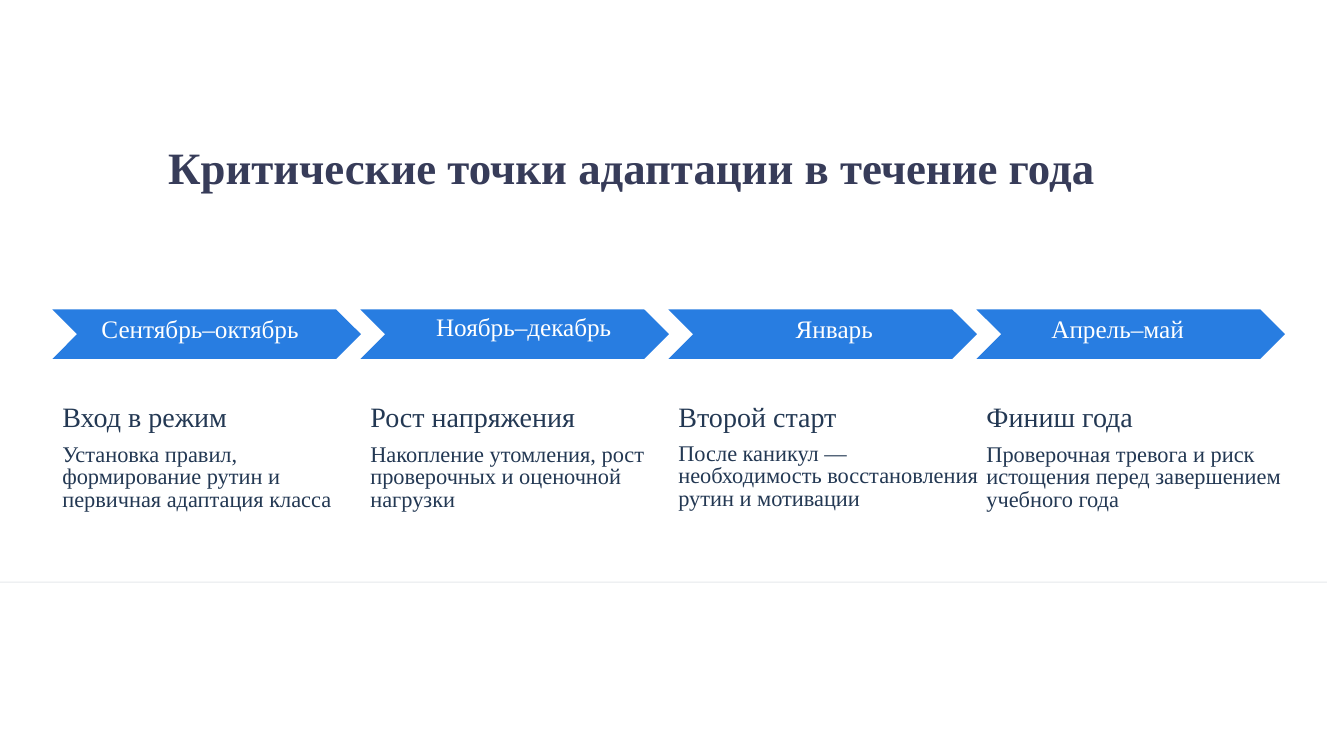
from pptx import Presentation
from pptx.dml.color import RGBColor
from pptx.enum.shapes import MSO_SHAPE
from pptx.enum.text import MSO_ANCHOR, PP_ALIGN
from pptx.util import Inches, Pt

TITLE = "Критические точки адаптации в течение года"
STAGES = [
    {"months": "Сентябрь–октябрь", "months_at": (0.83, 3.22, 2.31), "name": "Вход в режим",
     "details": "Установка правил, формирование рутин и первичная адаптация класса",
     "details_top": 4.41},
    {"months": "Ноябрь–декабрь", "months_at": (4.16, 3.2, 2.07), "name": "Рост напряжения",
     "details": "Накопление утомления, рост проверочных и оценочной нагрузки",
     "details_top": 4.41},
    {"months": "Январь", "months_at": (7.76, 3.22, 1.03), "name": "Второй старт",
     "details": "После каникул — необходимость восстановления рутин и мотивации",
     "details_top": 4.4},
    {"months": "Апрель–май", "months_at": (9.9, 3.22, 2.37), "name": "Финиш года",
     "details": "Проверочная тревога и риск истощения перед завершением учебного года",
     "details_top": 4.41},
]
COLORS = {"chevron": "287DE1", "months": "FFFFFF", "body": "233853",
          "title": "373C59", "divider": "E6E9EC"}
FONT = "Times New Roman"
LEFT, STEP, CHEVRON_WIDTH = 0.52, 3.055, 3.06
CHEVRON, ROUNDED = MSO_SHAPE.CHEVRON, MSO_SHAPE.ROUNDED_RECTANGLE
TOP, MIDDLE = MSO_ANCHOR.TOP, MSO_ANCHOR.MIDDLE
ALIGN_LEFT, ALIGN_CENTER = PP_ALIGN.LEFT, PP_ALIGN.CENTER


def add_block(slide, kind, box, color):
    block = slide.shapes.add_shape(kind, *map(Inches, box))
    block.shadow.inherit = False
    block.fill.solid()
    block.fill.fore_color.rgb = RGBColor.from_string(COLORS[color])
    block.line.fill.background()
    return block


def add_label(slide, text, box, size, color, spacing=None, align=ALIGN_LEFT,
              anchor=MIDDLE, bold=False, wrap=True):
    frame = slide.shapes.add_textbox(*map(Inches, box)).text_frame
    frame.word_wrap = wrap
    frame.vertical_anchor = anchor
    frame.text = text
    paragraph = frame.paragraphs[0]
    paragraph.alignment = align
    if spacing:
        paragraph.line_spacing = Pt(spacing)
    font = paragraph.runs[0].font
    font.name, font.size, font.bold = FONT, Pt(size), bold
    font.color.rgb = RGBColor.from_string(COLORS[color])


def main():
    """Build the slide on critical adaptation points of the school year."""
    deck = Presentation()
    deck.slide_width, deck.slide_height = Inches(13.33), Inches(7.5)
    slide = deck.slides.add_slide(deck.slide_layouts[6])

    for index, stage in enumerate(STAGES):
        left = LEFT + index * STEP
        add_block(slide, CHEVRON, (left, 3.07, CHEVRON_WIDTH, 0.49), "chevron")
        add_label(slide, stage["months"], (*stage["months_at"], 0.19), 18, "months",
                  spacing=14, align=ALIGN_CENTER)
        add_label(slide, stage["name"], (left, 3.99, 2.51, 0.31), 20, "body", spacing=22)
        add_label(slide, stage["details"], (left, stage["details_top"], 3.28, 0.67),
                  16, "body", spacing=16)

    divider = add_block(slide, ROUNDED, (-0.17, 5.77, 13.33, 0.01), "divider")
    divider.adjustments[0] = 0
    add_label(slide, TITLE, (1.52, 1.34, 9.49, 1.18), 32, "title",
              align=ALIGN_CENTER, anchor=TOP, bold=True, wrap=False)
    deck.save("out.pptx")


if __name__ == "__main__":
    main()
